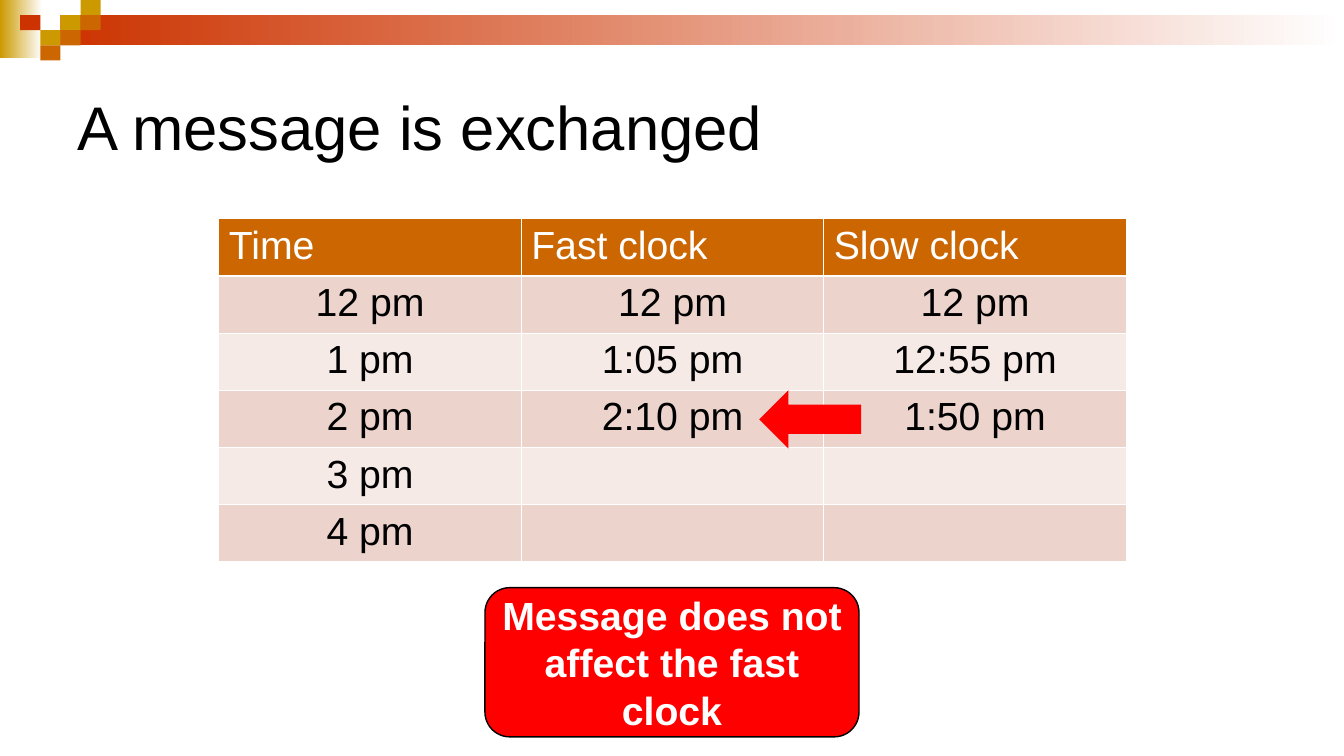
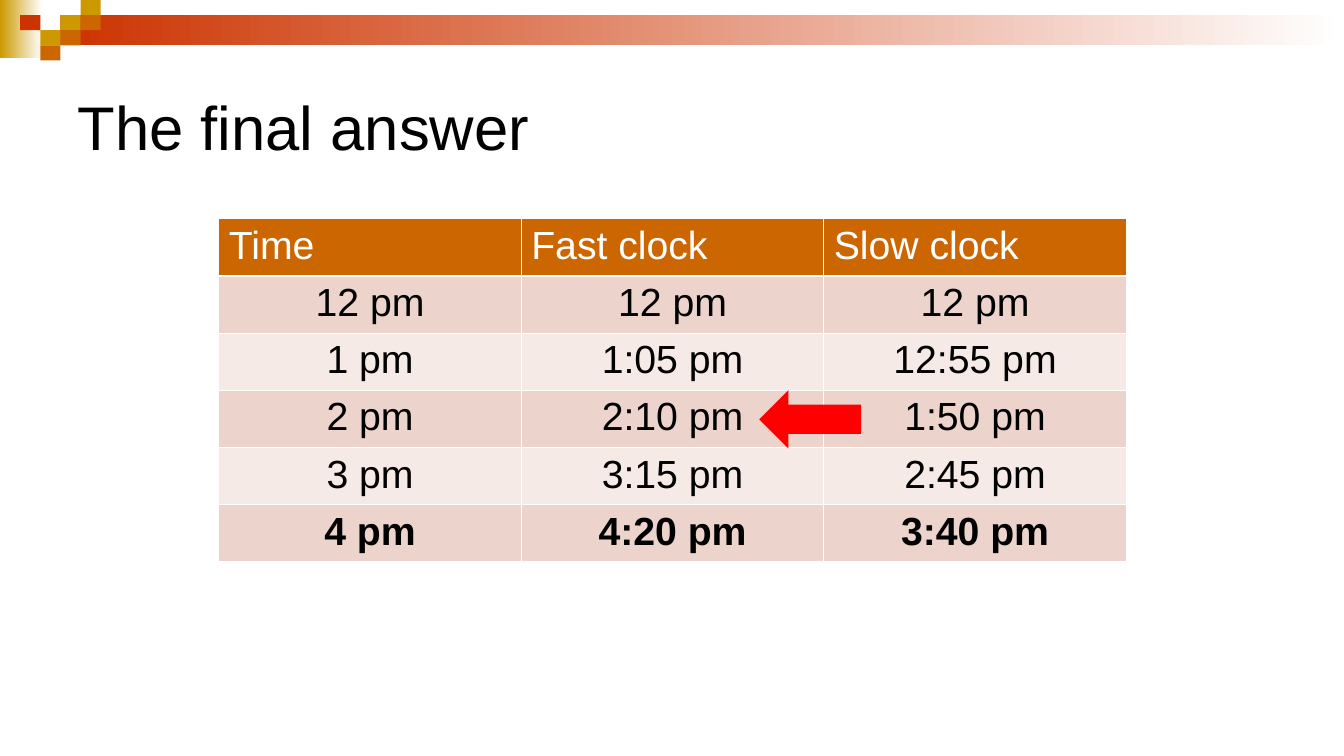
from lxml.etree import SubElement
from pptx import Presentation
from pptx.dml.color import RGBColor
from pptx.enum.shapes import MSO_SHAPE as Shape
from pptx.enum.text import MSO_ANCHOR as Anchor, PP_ALIGN as Align
from pptx.oxml.ns import qn
from pptx.util import Inches, Pt

COL, ROW = Inches(0.2), Inches(0.15)
FONT = "Arial"
TITLE_SIZE, BODY_SIZE = 44, 28

BLACK = RGBColor(0x00, 0x00, 0x00)
WHITE = RGBColor(0xFF, 0xFF, 0xFF)
GOLD = RGBColor(0xCC, 0x99, 0x00)
ORANGE = RGBColor(0xCC, 0x66, 0x00)
RUST = RGBColor(0xCC, 0x33, 0x00)
RED = RGBColor(0xFF, 0x00, 0x00)
ROW_TINTS = (RGBColor(0xEC, 0xD3, 0xCC), RGBColor(0xF6, 0xEA, 0xE7))

FADES = (((0, 0, 2.1, 3.87), GOLD), ((3, 1, 63.65, 2), RUST))
SQUARES = (
    (3, 1, GOLD), (4, 0, GOLD), (4, 1, ORANGE), (2, 2, GOLD),
    (1, 1, RUST), (3, 2, ORANGE), (2, 3, ORANGE),
)
TITLE_BOX = (3.35, 3.33, 60, 10)
TABLE_BOX = (10.85, 14.47, 45, 21.33)
CALLOUT_BOX = (24.05, 38.87, 18.55, 9.87)
ARROW_BOX = (37.65, 25.8, 5.05, 3.87)

HEADER = ("Time", "Fast clock", "Slow clock")
READINGS = (
    ("12 pm", "12 pm", "12 pm"),
    ("1 pm", "1:05 pm", "12:55 pm"),
    ("2 pm", "2:10 pm", "1:50 pm"),
)
PENDING = (("3 pm", "", ""), ("4 pm", "", ""))
ANSWERS = (("3 pm", "3:15 pm", "2:45 pm"), ("4 pm", "4:20 pm", "3:40 pm"))


def place(x, y, w, h):
    return [round(n) for n in (x * COL, y * ROW, w * COL, h * ROW)]


def write(tf, text, size, color, align=Align.LEFT, bold=False):
    p = tf.paragraphs[0]
    p.alignment = align
    r = p.add_run()
    r.text = text
    r.font.name = FONT
    r.font.size = Pt(size)
    r.font.bold = bold
    r.font.color.rgb = color


def add_shape(s, kind, box, color=None):
    sp = s.shapes.add_shape(kind, *place(*box))
    sp.shadow.inherit = False
    sp.line.fill.background()
    if color is not None:
        sp.fill.solid()
        sp.fill.fore_color.rgb = color
    return sp


def add_fade(s, box, color):
    fill = add_shape(s, Shape.RECTANGLE, box).fill
    fill.gradient()
    fill.gradient_angle = 0
    for stop, position, shade in zip(fill.gradient_stops, (0, 1), (color, WHITE)):
        stop.position = position
        stop.color.rgb = shade


def add_banner(s):
    for box, color in FADES:
        add_fade(s, box, color)
    for col, row, color in SQUARES:
        add_shape(s, Shape.RECTANGLE, (col, row, 1, 1), color)


def add_title(s, text):
    tf = s.shapes.add_textbox(*place(*TITLE_BOX)).text_frame
    tf.word_wrap = True
    tf.vertical_anchor = Anchor.MIDDLE
    write(tf, text, TITLE_SIZE, BLACK)


def add_borders(cell):
    tc_pr = cell._tc.get_or_add_tcPr()
    for side in ("a:lnL", "a:lnR", "a:lnT", "a:lnB"):
        ln = SubElement(tc_pr, qn(side), w=str(Pt(1)))
        fill = SubElement(ln, qn("a:solidFill"))
        SubElement(fill, qn("a:srgbClr"), val=str(WHITE))


def fill_cell(cell, text, fill, color, align, bold):
    add_borders(cell)
    cell.fill.solid()
    cell.fill.fore_color.rgb = fill
    if text:
        write(cell.text_frame, text, BODY_SIZE, color, align, bold)


def add_clock_table(s, readings, bold_last):
    rows = (HEADER, *readings)
    table = s.shapes.add_table(len(rows), len(HEADER), *place(*TABLE_BOX)).table
    for i, row in enumerate(rows):
        if i == 0:
            style = (ORANGE, WHITE, Align.LEFT, False)
        else:
            bold = bold_last and i == len(readings)
            style = (ROW_TINTS[(i - 1) % 2], BLACK, Align.CENTER, bold)
        for j, text in enumerate(row):
            fill_cell(table.cell(i, j), text, *style)


def add_callout(s, text):
    sp = add_shape(s, Shape.ROUNDED_RECTANGLE, CALLOUT_BOX, RED)
    sp.line.color.rgb = BLACK
    sp.line.width = Pt(1)
    tf = sp.text_frame
    tf.word_wrap = True
    tf.vertical_anchor = Anchor.MIDDLE
    write(tf, text, BODY_SIZE, WHITE, Align.CENTER, True)


def add_clock_slide(prs, title, readings, callout=None, bold_last=False):
    s = prs.slides.add_slide(prs.slide_layouts[6])
    add_banner(s)
    add_title(s, title)
    add_clock_table(s, readings, bold_last)
    if callout:
        add_callout(s, callout)
    add_shape(s, Shape.LEFT_ARROW, ARROW_BOX, RED)


def main():
    prs = Presentation()
    prs.slide_width, prs.slide_height = Inches(13.33), Inches(7.5)
    add_clock_slide(prs, "A message is exchanged", READINGS + PENDING,
                    callout="Message does not affect the fast clock")
    add_clock_slide(prs, "The final answer", READINGS + ANSWERS, bold_last=True)
    prs.save("out.pptx")


if __name__ == "__main__":
    main()
